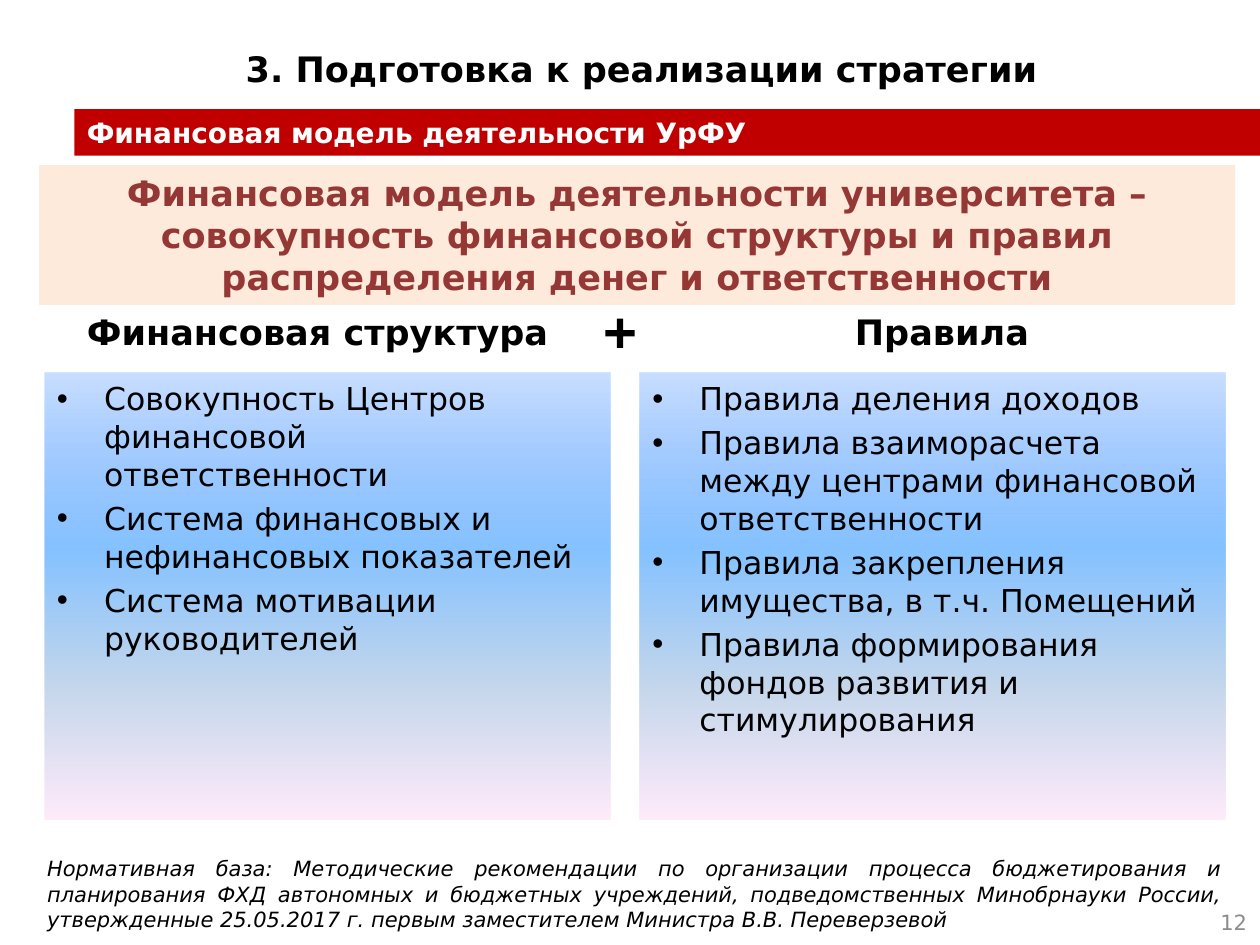
from dataclasses import dataclass

from lxml import etree
from pptx import Presentation
from pptx import util as u
from pptx.dml.color import RGBColor
from pptx.enum import shapes, text
from pptx.oxml.ns import qn

FONT = "DejaVu Sans"
BLACK = RGBColor(0x00, 0x00, 0x00)
WHITE = RGBColor(0xFF, 0xFF, 0xFF)
RED = RGBColor(0xC0, 0x00, 0x00)
MAROON = RGBColor(0x95, 0x37, 0x35)
PEACH = RGBColor(0xFC, 0xD5, 0xB5)
GREY = RGBColor(0x8C, 0x8C, 0x8C)
# Gradient stops: position %, colour, opacity %
PANEL_STOPS = [
    (0, RGBColor(0x5E, 0x9E, 0xFF), 33),
    (40, RGBColor(0x85, 0xC2, 0xFF), 100),
    (70, RGBColor(0xC4, 0xD6, 0xEB), 100),
    (100, RGBColor(0xFF, 0xEB, 0xFA), 100),
]
LEFT, CENTER = text.PP_ALIGN.LEFT, text.PP_ALIGN.CENTER
RIGHT, JUSTIFY = text.PP_ALIGN.RIGHT, text.PP_ALIGN.JUSTIFY
TOP, MIDDLE, BOTTOM = (text.MSO_ANCHOR.TOP, text.MSO_ANCHOR.MIDDLE,
                       text.MSO_ANCHOR.BOTTOM)


@dataclass
class Area:
    """Left, top, width and height in centimetres."""
    left: float
    top: float
    width: float
    height: float

    def lengths(self) -> list:
        return [u.Cm(v) for v in (self.left, self.top, self.width, self.height)]


@dataclass
class Style:
    size: float
    color: RGBColor = BLACK
    bold: bool = False
    italic: bool = False
    align: text.PP_ALIGN = LEFT
    anchor: text.MSO_ANCHOR = TOP


@dataclass
class Panel:
    area: Area
    items: list


def write(shape, lines: list, style: Style, wrap: bool = True) -> None:
    frame = shape.text_frame
    frame.text = "\n".join(lines)
    frame.auto_size = text.MSO_AUTO_SIZE.NONE
    frame.word_wrap = wrap
    frame.vertical_anchor = style.anchor
    for paragraph in frame.paragraphs:
        paragraph.alignment = style.align
        for run in paragraph.runs:
            run.font.name = FONT
            run.font.size = u.Pt(style.size)
            run.font.bold = style.bold
            run.font.italic = style.italic
            run.font.color.rgb = style.color


def add_label(slide, area: Area, line: str, style: Style, wrap: bool = True) -> None:
    write(slide.shapes.add_textbox(*area.lengths()), [line], style, wrap)


def add_block(slide, area: Area, kind=shapes.MSO_SHAPE.RECTANGLE):
    block = slide.shapes.add_shape(kind, *area.lengths())
    block.shadow.inherit = False
    block.line.fill.background()
    return block


def fill_solid(shape, color: RGBColor, opacity: int = 100) -> None:
    shape.fill.solid()
    shape.fill.fore_color.rgb = color
    if opacity < 100:
        tint = shape._element.spPr.find(qn("a:solidFill"))[0]
        etree.SubElement(tint, qn("a:alpha"), val=str(opacity * 1000))


def fill_gradient(shape, stops: list) -> None:
    shape.fill.gradient()
    shape.fill.gradient_angle = 270
    stop_list = shape._element.spPr.find(qn("a:gradFill")).find(qn("a:gsLst"))
    for old in list(stop_list):
        stop_list.remove(old)
    for position, color, opacity in stops:
        stop = etree.SubElement(stop_list, qn("a:gs"), pos=str(position * 1000))
        tint = etree.SubElement(stop, qn("a:srgbClr"), val=str(color))
        if opacity < 100:
            etree.SubElement(tint, qn("a:alpha"), val=str(opacity * 1000))


def add_panel(slide, panel: Panel) -> None:
    block = add_block(slide, panel.area)
    fill_gradient(block, PANEL_STOPS)
    write(block, panel.items, Style(18))
    hanging = u.Cm(0.95)
    for index, paragraph in enumerate(block.text_frame.paragraphs):
        properties = paragraph._p.get_or_add_pPr()
        properties.set("marL", str(hanging))
        properties.set("indent", str(-hanging))
        etree.SubElement(properties, qn("a:buFont"), typeface="Arial")
        etree.SubElement(properties, qn("a:buChar"), char="•")
        if index:
            paragraph.space_before = u.Pt(3.6)


PANELS = [
    Panel(Area(0.9, 7.52, 11.4, 9), [
        "Совокупность Центров финансовой ответственности",
        "Система финансовых и нефинансовых показателей",
        "Система мотивации руководителей",
    ]),
    Panel(Area(12.9, 7.52, 11.81, 9), [
        "Правила деления доходов",
        "Правила взаиморасчета между центрами финансовой ответственности",
        "Правила закрепления имущества, в т.ч. Помещений",
        "Правила формирования фондов развития и стимулирования",
    ]),
]


def main() -> None:
    deck = Presentation()
    deck.slide_width, deck.slide_height = u.Cm(25.4), u.Cm(19.05)
    slide = deck.slides.add_slide(deck.slide_layouts[5])

    # Title and section bar
    title = slide.shapes.title
    title.left, title.top, title.width, title.height = Area(4.7, 0, 20.7, 1.93).lengths()
    write(title, ["3. Подготовка к реализации стратегии"],
          Style(20, bold=True, anchor=BOTTOM))
    section = add_block(slide, Area(1.5, 2.2, 23.9, 0.94))
    fill_solid(section, RED)
    write(section, ["Финансовая модель деятельности УрФУ"],
          Style(16, WHITE, bold=True))

    # Definition
    definition = add_block(slide, Area(0.79, 3.33, 24.11, 2.82))
    fill_solid(definition, PEACH, 48)
    write(definition, ["Финансовая модель деятельности университета – совокупность "
                       "финансовой структуры и правил распределения денег и "
                       "ответственности"],
          Style(20, MAROON, bold=True, align=CENTER))

    # Two components joined by a plus
    add_label(slide, Area(1.5, 6.13, 9.88, 1.11), "Финансовая структура",
              Style(20, bold=True), wrap=False)
    add_label(slide, Area(13.49, 6.13, 11, 1.11), "Правила",
              Style(20, bold=True, align=CENTER))
    plus = add_block(slide, Area(12.1, 6.32, 0.8, 0.8), shapes.MSO_SHAPE.MATH_PLUS)
    plus.adjustments[0] = 0.16
    fill_solid(plus, BLACK)
    for panel in PANELS:
        add_panel(slide, panel)

    # Regulatory basis and page number
    add_label(slide, Area(0.7, 17.13, 24.2, 1.8),
              "Нормативная база: Методические рекомендации по организации процесса "
              "бюджетирования и планирования ФХД автономных и бюджетных учреждений, "
              "подведомственных Минобрнауки России, утвержденные 25.05.2017 г. первым "
              "заместителем Министра В.В. Переверзевой",
              Style(12, italic=True, align=JUSTIFY))
    add_label(slide, Area(19.46, 18.08, 5.93, 1.01), "12",
              Style(12, GREY, align=RIGHT, anchor=MIDDLE))

    deck.save("out.pptx")


if __name__ == "__main__":
    main()
